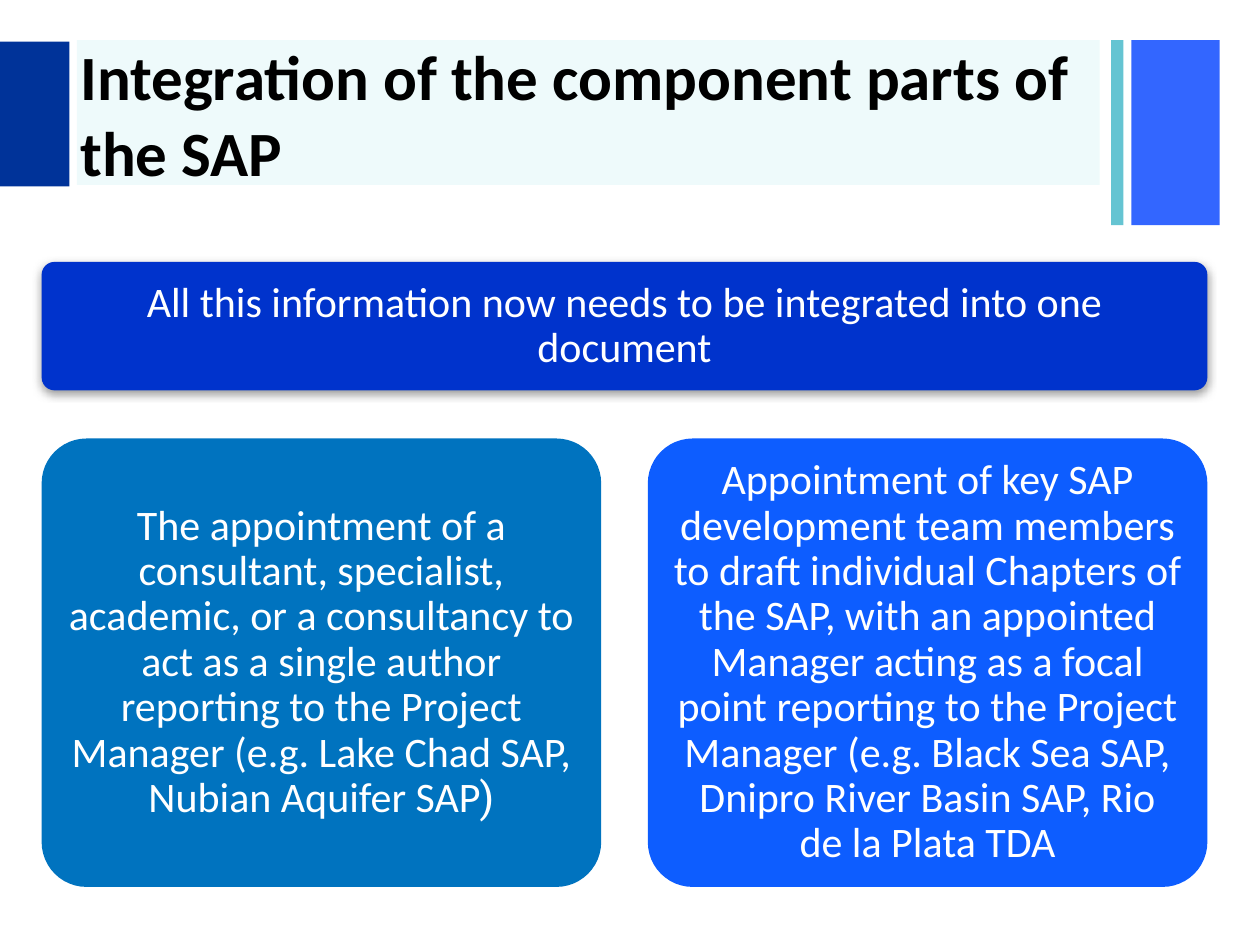
from dataclasses import dataclass, field

from lxml import etree
from pptx import Presentation
from pptx import util as u
from pptx.dml.color import RGBColor
from pptx.enum import shapes, text
from pptx.oxml.ns import qn


@dataclass(frozen=True)
class Theme:
    body_font: str = "Calibri"
    bracket_font: str = "Roboto Slab"
    title_size: int = 36
    body_size: int = 24
    ink: str = "000000"
    on_fill: str = "FFFFFF"
    title_band: str = "14C5D0"
    navy: str = "003399"
    teal: str = "65C4D2"
    blue: str = "3366FF"
    banner: str = "0033CC"
    card_left: str = "0073BF"
    card_right: str = "0D5DFF"
    shadow: str = "808080"


@dataclass(frozen=True)
class Box:
    x: float
    y: float
    w: float
    h: float

    def emu(self) -> list:
        return [u.Cm(v) for v in (self.x, self.y, self.w, self.h)]


@dataclass(frozen=True)
class Block:
    box: Box
    fill: str
    runs: list = field(default_factory=list)
    alpha: int = 100
    shadow: bool = False


T = Theme()
MARGIN, GAP, WIDTH = 0.84, 0.94, 23.5
CARD_W = (WIDTH - GAP) / 2
CARD_Y, CARD_H = 8.84, 9.04

ACCENTS = [
    Block(Box(22.81, 0.81, 1.78, 3.73), T.blue),
    Block(Box(22.4, 0.81, 0.25, 3.73), T.teal),
    Block(Box(1.55, 0.81, 20.62, 2.92), T.title_band, alpha=7),
    Block(Box(0, 0.84, 1.4, 2.92), T.navy),
]
PANELS = [
    Block(
        Box(MARGIN, 5.28, WIDTH, 2.59), T.banner,
        [("All this information now needs to be integrated into one document", T.body_font)],
        shadow=True,
    ),
    Block(
        Box(MARGIN, CARD_Y, CARD_W, CARD_H), T.card_left,
        [("The appointment of a consultant, specialist, academic, or a consultancy to act as "
          "a single author reporting to the Project Manager (e.g. Lake Chad SAP, "
          "Nubian Aquifer SAP", T.body_font), (")", T.bracket_font)],
    ),
    Block(
        Box(MARGIN + CARD_W + GAP, CARD_Y, CARD_W, CARD_H), T.card_right,
        [("Appointment of key SAP development team members to draft individual Chapters of "
          "the SAP, with an appointed Manager acting as a focal point reporting to the Project "
          "Manager (e.g. Black Sea SAP, Dnipro River Basin SAP, Rio de la Plata TDA",
          T.body_font)],
    ),
]


def set_all(target, values: dict) -> None:
    for name, value in values.items():
        setattr(target, name, value)


def add_alpha(color, percent: int) -> None:
    etree.SubElement(color, qn("a:alpha"), val=str(percent * 1000))


def add_shadow(sp) -> None:
    effects = sp._element.spPr.find(qn("a:effectLst"))
    outer = etree.SubElement(
        effects, qn("a:outerShdw"), blurRad=str(u.Pt(5)), dist=str(u.Pt(2)),
        dir="5400000", rotWithShape="0",
    )
    add_alpha(etree.SubElement(outer, qn("a:srgbClr"), val=T.shadow), 75)


def draw_block(s, block: Block, kind):
    sp = s.shapes.add_shape(kind, *block.box.emu())
    sp.shadow.inherit = False
    sp.fill.solid()
    sp.fill.fore_color.rgb = RGBColor.from_string(block.fill)
    sp.line.fill.background()
    if block.alpha < 100:
        add_alpha(sp._element.spPr.find(qn("a:solidFill"))[0], block.alpha)
    if block.shadow:
        add_shadow(sp)
    return sp


def write(sp, runs: list, size: int, color: str, bold: bool, inset_y: float, para: dict) -> None:
    tf = sp.text_frame
    set_all(tf, {
        "word_wrap": True, "vertical_anchor": text.MSO_ANCHOR.MIDDLE,
        "margin_left": u.Cm(0.25), "margin_right": u.Cm(0.25),
        "margin_top": u.Cm(inset_y), "margin_bottom": u.Cm(inset_y),
    })
    p = tf.paragraphs[0]
    set_all(p, para)
    for words, font in runs:
        r = p.add_run()
        r.text = words
        set_all(r.font, {"name": font, "size": u.Pt(size), "bold": bold})
        r.font.color.rgb = RGBColor.from_string(color)


def draw_panel(s, block: Block) -> None:
    sp = draw_block(s, block, shapes.MSO_SHAPE.ROUNDED_RECTANGLE)
    sp.adjustments[0] = 0.1
    write(sp, block.runs, T.body_size, T.on_fill, False, 0.25,
          {"alignment": text.PP_ALIGN.CENTER, "line_spacing": 0.9})


def main() -> None:
    prs = Presentation()
    set_all(prs, {"slide_width": u.Cm(25.4), "slide_height": u.Cm(19.05)})
    s = prs.slides.add_slide(prs.slide_layouts[6])
    for accent in ACCENTS:
        draw_block(s, accent, shapes.MSO_SHAPE.RECTANGLE)
    title = s.shapes.add_textbox(*Box(1.37, 0.86, 21.01, 2.84).emu())
    write(title, [("Integration of the component parts of the SAP", T.body_font)],
          T.title_size, T.ink, True, 0.13, {"alignment": text.PP_ALIGN.LEFT})
    for panel in PANELS:
        draw_panel(s, panel)
    prs.save("out.pptx")


if __name__ == "__main__":
    main()
